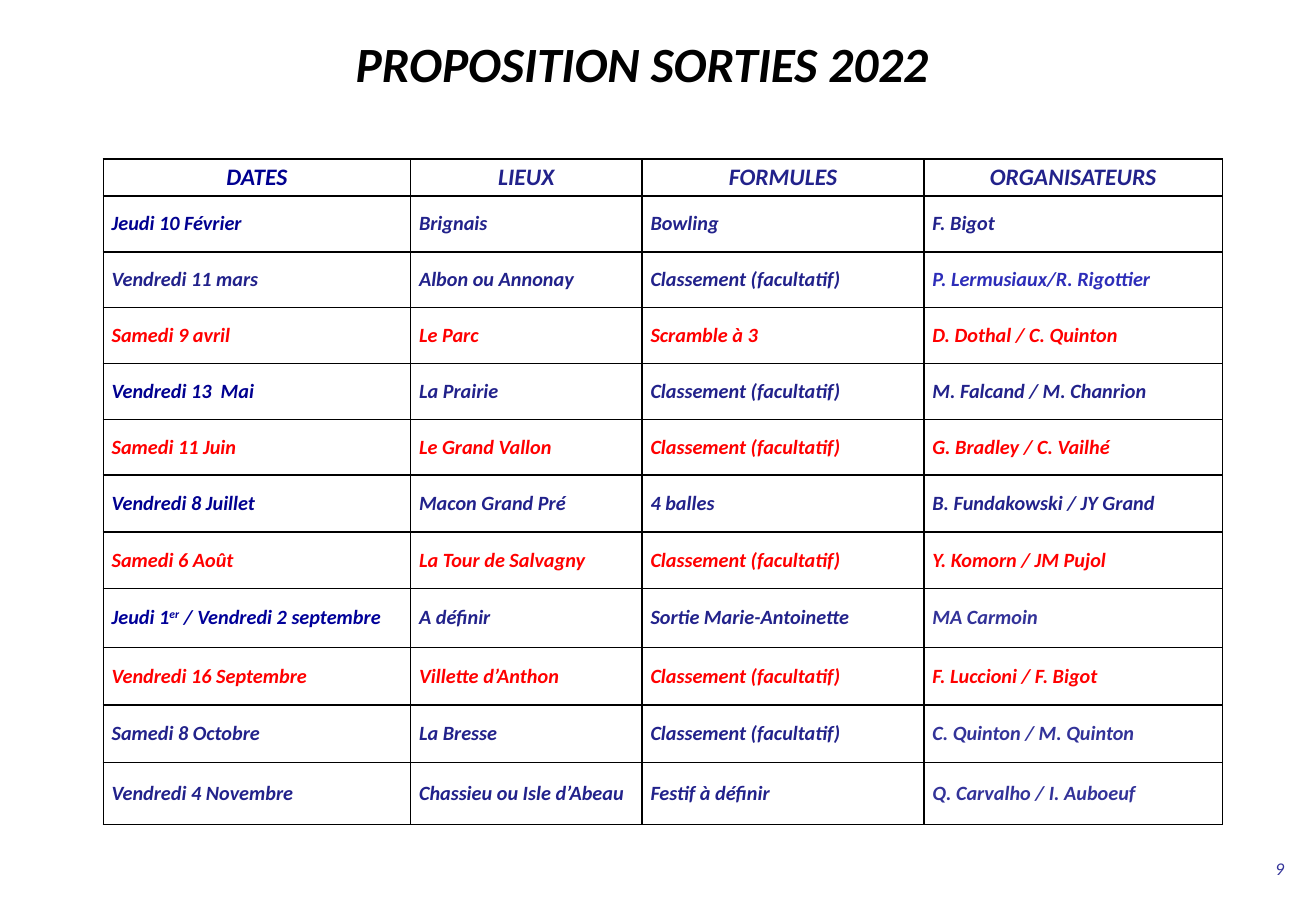
from lxml.etree import SubElement
from pptx import Presentation
from pptx.dml.color import RGBColor
from pptx.enum.text import MSO_ANCHOR as Anchor, MSO_AUTO_SIZE as AutoSize, PP_ALIGN as Align
from pptx.oxml.ns import qn
from pptx.util import Pt

BLACK = RGBColor(0x00, 0x00, 0x00)
NAVY = RGBColor(0x00, 0x00, 0x90)
DARK_BLUE = RGBColor(0x00, 0x00, 0x99)
INDIGO = RGBColor(0x22, 0x22, 0x8B)
BLUE = RGBColor(0x2D, 0x2D, 0xB9)
SLATE = RGBColor(0x33, 0x33, 0x99)
RED = RGBColor(0xFF, 0x00, 0x00)

RANKED = "Classement (facultatif)"
HEADINGS = ("DATES", "LIEUX", "FORMULES", "ORGANISATEURS")
OUTINGS = [
    (HEADINGS, NAVY, INDIGO),
    (("Jeudi 10 Février", "Brignais", "Bowling", "F. Bigot"), NAVY, INDIGO),
    (("Vendredi 11 mars", "Albon ou Annonay", RANKED, "P. Lermusiaux/R. Rigottier"), INDIGO, BLUE),
    (("Samedi 9 avril", "Le Parc", "Scramble à 3", "D. Dothal / C. Quinton"), RED, RED),
    (("Vendredi 13  Mai", "La Prairie", RANKED, "M. Falcand / M. Chanrion"), NAVY, INDIGO),
    (("Samedi 11 Juin", "Le Grand Vallon", RANKED, "G. Bradley / C. Vailhé"), RED, RED),
    (("Vendredi 8 Juillet", "Macon Grand Pré", "4 balles", "B. Fundakowski / JY Grand"), NAVY, INDIGO),
    (("Samedi 6 Août", "La Tour de Salvagny", RANKED, "Y. Komorn / JM Pujol"), RED, RED),
    (("Jeudi 1^er^ / Vendredi 2 septembre", "A définir", "Sortie Marie-Antoinette", "MA Carmoin"),
     DARK_BLUE, SLATE),
    (("Vendredi 16 Septembre", "Villette d’Anthon", RANKED, "F. Luccioni / F. Bigot"), RED, RED),
    (("Samedi 8 Octobre", "La Bresse", RANKED, "C. Quinton / M. Quinton"), INDIGO, SLATE),
    (("Vendredi 4 Novembre", "Chassieu ou Isle d’Abeau", "Festif à définir", "Q. Carvalho / I. Auboeuf"),
     INDIGO, SLATE),
]
COLUMN_WIDTHS = (182.2, 137.2, 167.1, 176.9)
ROW_HEIGHTS = (21.9, 33.1, 33.1, 33.1, 33.1, 33.1, 33.8, 33.5, 35, 34.1, 34.1, 36.7)


def write(para, text, size, color, align, bold=True):
    for index, part in enumerate(text.split("^")):
        span = para.add_run()
        span.text = part
        if index % 2:
            span._r.get_or_add_rPr().set("baseline", "30000")
    para.alignment = align
    font = para.font
    font.name, font.size, font.bold, font.italic = "Calibri", Pt(size), bold, True
    font.color.rgb = color


def add_borders(cell):
    properties = cell._tc.get_or_add_tcPr()
    for side in ("lnL", "lnR", "lnT", "lnB"):
        line = SubElement(properties, qn(f"a:{side}"), w=str(Pt(1)))
        fill = SubElement(line, qn("a:solidFill"))
        SubElement(fill, qn("a:srgbClr"), val=str(BLACK))


deck = Presentation()
deck.slide_width, deck.slide_height = Pt(780), Pt(540)
page = deck.slides.add_slide(deck.slide_layouts[5])

title = page.shapes.title
title.left, title.top, title.width, title.height = Pt(95), Pt(16.6), Pt(571), Pt(53.3)
frame = title.text_frame
frame.auto_size = AutoSize.NONE
frame.vertical_anchor = Anchor.TOP
frame.margin_left = frame.margin_right = Pt(5.8)
frame.margin_top = frame.margin_bottom = Pt(2.9)
write(frame.paragraphs[0], "PROPOSITION SORTIES 2022", 29.2, BLACK, Align.CENTER)

holder = page.shapes.add_table(
    len(OUTINGS), len(HEADINGS), Pt(61.2), Pt(94.3), Pt(sum(COLUMN_WIDTHS)), Pt(sum(ROW_HEIGHTS)))
table = holder.table
table.first_row = table.horz_banding = False
for column, width in zip(table.columns, COLUMN_WIDTHS):
    column.width = Pt(width)
for row, height in zip(table.rows, ROW_HEIGHTS):
    row.height = Pt(height)

for row_index, (texts, date_color, organiser_color) in enumerate(OUTINGS):
    middle_color = RED if date_color == RED else INDIGO
    colors = (date_color, middle_color, middle_color, organiser_color)
    is_heading = row_index == 0
    for column_index, (text, color) in enumerate(zip(texts, colors)):
        cell = table.cell(row_index, column_index)
        cell.margin_left = cell.margin_right = Pt(5)
        cell.margin_top = cell.margin_bottom = Pt(2.2)
        cell.vertical_anchor = Anchor.TOP if is_heading else Anchor.MIDDLE
        add_borders(cell)
        cell.fill.background()
        write(cell.text_frame.paragraphs[0], text, 14 if is_heading else 12, color,
              Align.CENTER if is_heading else Align.LEFT)

number_box = page.shapes.add_textbox(Pt(656.6), Pt(504), Pt(111.6), Pt(20.9))
frame = number_box.text_frame
frame.word_wrap = True
frame.vertical_anchor = Anchor.MIDDLE
write(frame.paragraphs[0], "9", 10.6, SLATE, Align.RIGHT, bold=False)

deck.save("out.pptx")
